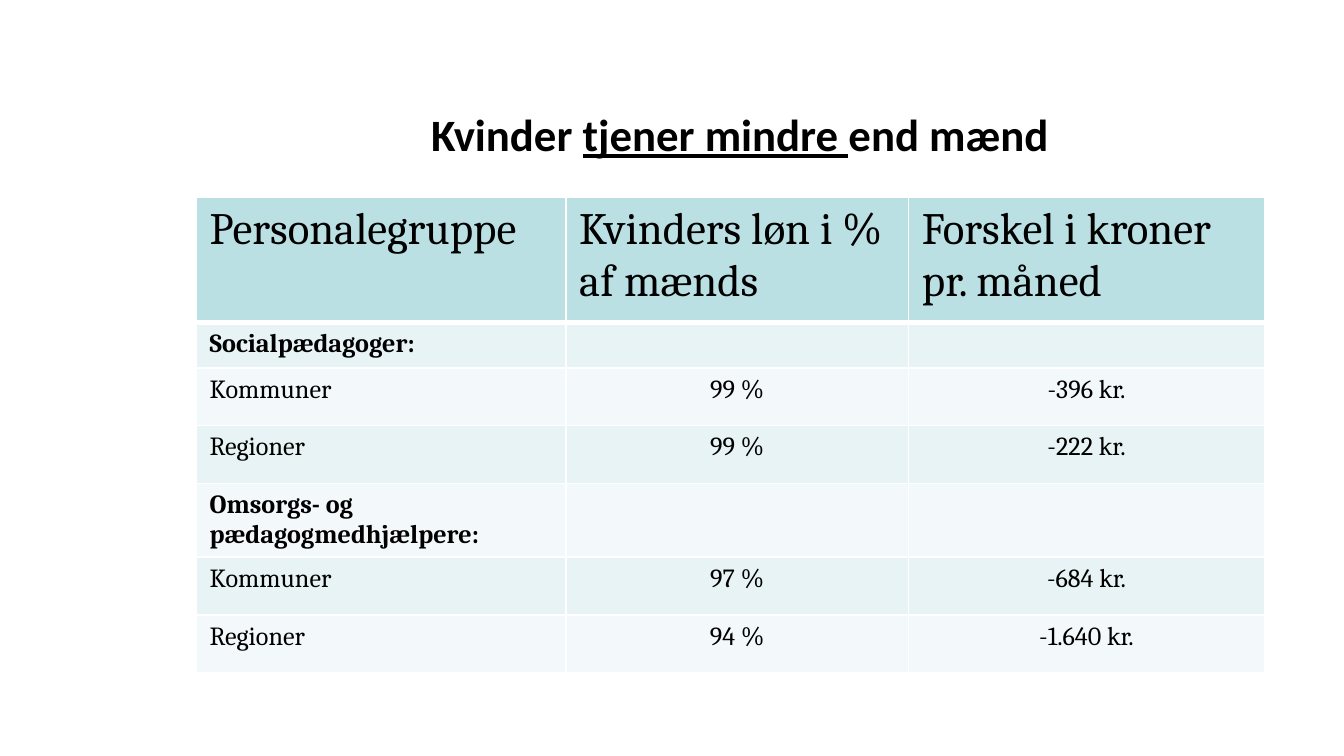
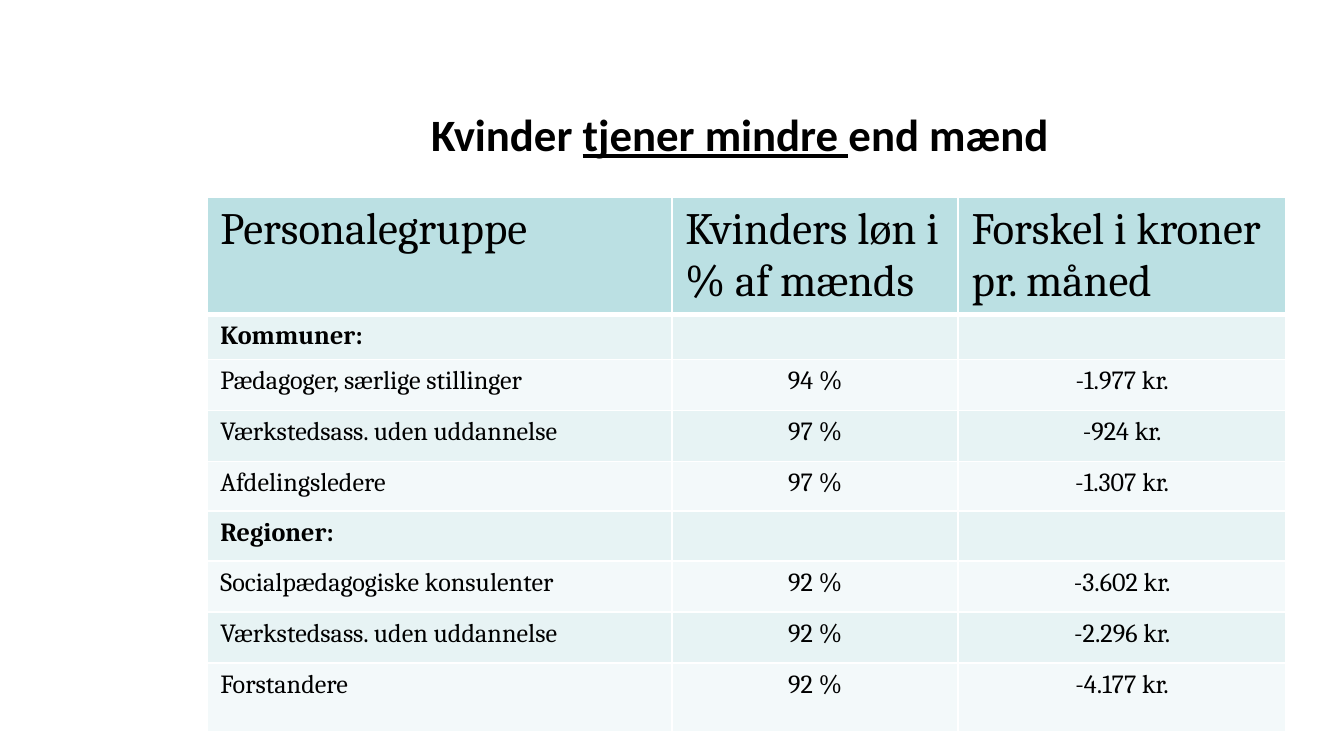
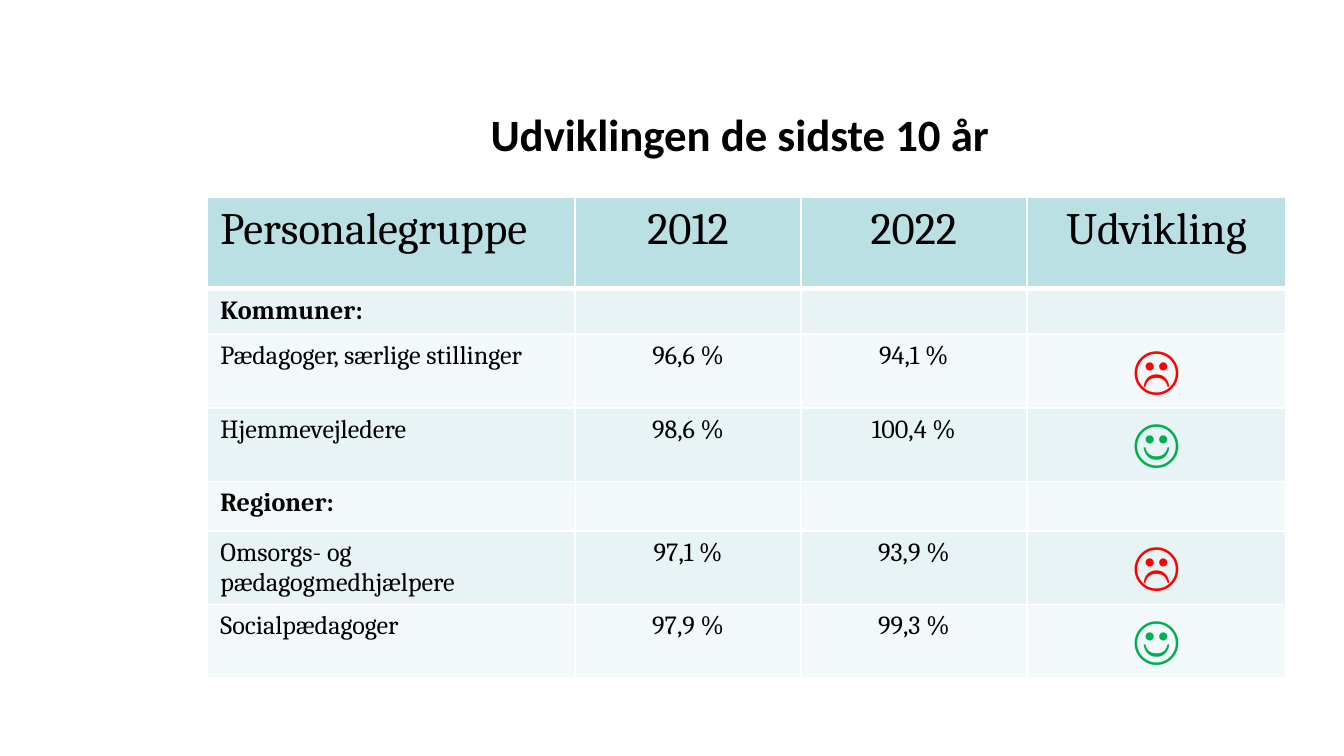
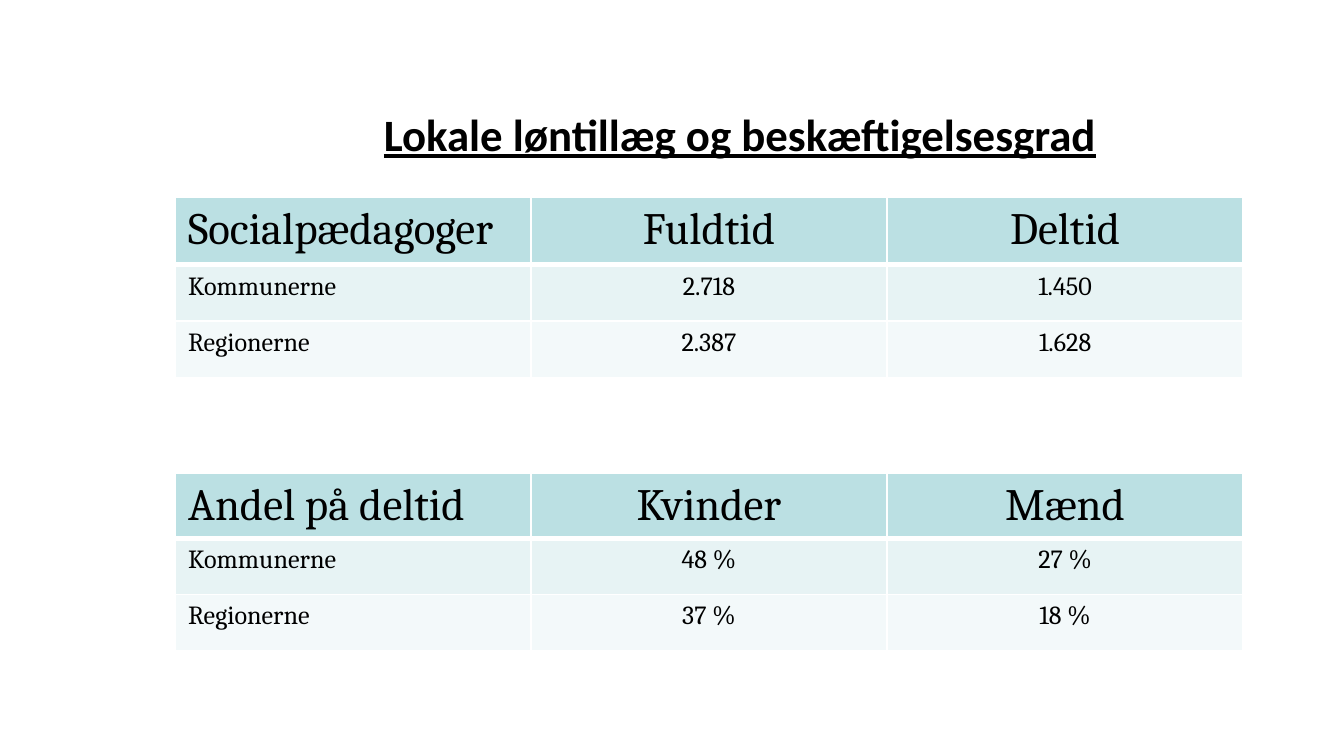
from dataclasses import dataclass

from pptx import Presentation
from pptx.dml.color import RGBColor
from pptx.enum.text import MSO_ANCHOR, MSO_AUTO_SIZE, PP_ALIGN
from pptx.oxml.xmlchemy import OxmlElement
from pptx.util import Inches, Pt

LEFT, CENTER = PP_ALIGN.LEFT, PP_ALIGN.CENTER
TOP = MSO_ANCHOR.TOP
NO_AUTOFIT = MSO_AUTO_SIZE.NONE
TITLE_ONLY = 5


@dataclass(frozen=True)
class Theme:
    text: str = "000000"
    header_fill: str = "BBE0E3"
    band_fills: tuple = ("E7F3F4", "F3F9FA")
    border: str = "FFFFFF"
    worse: str = "FF0000"
    better: str = "00B050"
    title_font: str = "Calibri"
    table_font: str = "Cambria"
    title_size: int = 24
    title_line: int = 42
    header_size: int = 24
    body_size: int = 14
    symbol_size: int = 28
    border_width: int = 1
    header_rule: int = 3


THEME = Theme()
SYMBOL_COLORS = {"☹": THEME.worse, "☺": THEME.better}
TABLE_TOP = 1.47
PAY_HEADER = ["Personalegruppe", "Kvinders løn i % af mænds", "Forskel i kroner pr. måned"]
PAY_TITLE = [("Kvinder ", False), ("tjener mindre ", True), ("end mænd", False)]


def add_run(paragraph, text, font, size, color=THEME.text, bold=False, underline=False):
    run = paragraph.add_run()
    run.text = text
    run.font.name = font
    run.font.size = Pt(size)
    run.font.bold = bold
    run.font.underline = underline
    run.font.color.rgb = RGBColor.from_string(color)


def add_titled_slide(presentation, title_parts):
    """Add a slide whose title is made of (text, underlined) parts."""
    slide = presentation.slides.add_slide(presentation.slide_layouts[TITLE_ONLY])
    title = slide.shapes.title
    title.left, title.top = Inches(1.57), Inches(0.61)
    title.width, title.height = Inches(7.87), Inches(0.87)
    frame = title.text_frame
    frame.margin_left = frame.margin_right = frame.margin_top = frame.margin_bottom = 0
    frame.auto_size = NO_AUTOFIT
    frame.word_wrap = True
    frame.vertical_anchor = TOP
    paragraph = frame.paragraphs[0]
    paragraph.alignment = CENTER
    paragraph.line_spacing = Pt(THEME.title_line)
    for text, underline in title_parts:
        add_run(paragraph, text, THEME.title_font, THEME.title_size,
                bold=True, underline=underline)
    return slide


def set_header_borders(cell):
    """Draw the header's borders; the table style draws those of the body."""
    properties = cell._tc.get_or_add_tcPr()
    for side in "LRTB":
        line = OxmlElement(f"a:ln{side}")
        line.set("w", str(Pt(THEME.header_rule if side == "B" else THEME.border_width)))
        fill = OxmlElement("a:solidFill")
        color = OxmlElement("a:srgbClr")
        color.set("val", THEME.border)
        fill.append(color)
        line.append(fill)
        properties.append(line)


def fill_cell(cell, color):
    cell.fill.solid()
    cell.fill.fore_color.rgb = RGBColor.from_string(color)


def write_cell(cell, text, size=THEME.body_size, alignment=LEFT, **run_format):
    paragraph = cell.text_frame.paragraphs[0]
    paragraph.alignment = alignment
    if text:
        add_run(paragraph, text, THEME.table_font, size, **run_format)
    else:
        end_format = OxmlElement("a:endParaRPr")
        end_format.set("sz", str(size * 100))
        paragraph._p.append(end_format)


def write_body_cell(cell, text, column, is_group):
    if text in SYMBOL_COLORS:
        write_cell(cell, text, THEME.symbol_size, CENTER,
                   color=SYMBOL_COLORS[text], bold=True)
    else:
        write_cell(cell, text, alignment=CENTER if column else LEFT, bold=is_group)


def add_banded_table(slide, left, top, widths, heights, header, rows, header_alignment=CENTER):
    """Add a table; a row with a single entry is a bold group heading."""
    table = slide.shapes.add_table(
        len(heights), len(widths), Inches(left), Inches(top),
        Inches(sum(widths)), Inches(sum(heights))).table
    for column, width in zip(table.columns, widths):
        column.width = Inches(width)
    for row, height in zip(table.rows, heights):
        row.height = Inches(height)

    for column, text in enumerate(header):
        cell = table.cell(0, column)
        set_header_borders(cell)
        fill_cell(cell, THEME.header_fill)
        write_cell(cell, text, THEME.header_size, header_alignment if column else LEFT)

    for index, entries in enumerate(rows):
        is_group = len(entries) == 1
        padded = entries + [""] * (len(widths) - len(entries))
        for column, text in enumerate(padded):
            cell = table.cell(index + 1, column)
            fill_cell(cell, THEME.band_fills[index % 2])
            write_body_cell(cell, text, column, is_group)


def add_care_staff_slide(presentation):
    slide = add_titled_slide(presentation, PAY_TITLE)
    add_banded_table(
        slide, 1.46, TABLE_TOP, [2.75, 2.55, 2.65], [0.93, 0.33] + [0.43] * 5, PAY_HEADER,
        [["Socialpædagoger:"],
         ["Kommuner", "99 %", "-396 kr."],
         ["Regioner", "99 %", "-222 kr."],
         ["Omsorgs- og pædagogmedhjælpere:"],
         ["Kommuner", "97 %", "-684 kr."],
         ["Regioner", "94 %", "-1.640 kr."]],
        header_alignment=LEFT)


def add_other_staff_slide(presentation):
    slide = add_titled_slide(presentation, PAY_TITLE)
    add_banded_table(
        slide, 1.54, TABLE_TOP, [3.46, 2.13, 2.44],
        [0.68, 0.32, 0.38, 0.38, 0.37, 0.37, 0.38, 0.38, 0.51], PAY_HEADER,
        [["Kommuner:"],
         ["Pædagoger, særlige stillinger", "94 %", "-1.977 kr."],
         ["Værkstedsass. uden uddannelse", "97 %", "-924 kr."],
         ["Afdelingsledere", "97 %", "-1.307 kr."],
         ["Regioner:"],
         ["Socialpædagogiske konsulenter", "92 %", "-3.602 kr."],
         ["Værkstedsass. uden uddannelse", "92 %", "-2.296 kr."],
         ["Forstandere", "92 %", "-4.177 kr."]],
        header_alignment=LEFT)


def add_development_slide(presentation):
    slide = add_titled_slide(presentation, [("Udviklingen de sidste 10 år", False)])
    add_banded_table(
        slide, 1.54, TABLE_TOP, [2.74, 1.68, 1.68, 1.93],
        [0.68, 0.32, 0.38, 0.38, 0.37, 0.38, 0.38],
        ["Personalegruppe", "2012", "2022", "Udvikling"],
        [["Kommuner:"],
         ["Pædagoger, særlige stillinger", "96,6 %", "94,1 %", "☹"],
         ["Hjemmevejledere", "98,6 %", "100,4 %", "☺"],
         ["Regioner:"],
         ["Omsorgs- og pædagogmedhjælpere", "97,1 %", "93,9 %", "☹"],
         ["Socialpædagoger", "97,9 %", "99,3 %", "☺"]])


def add_local_pay_slide(presentation):
    slide = add_titled_slide(presentation, [("Lokale løntillæg og beskæftigelsesgrad", True)])
    widths = [2.65] * 3
    add_banded_table(
        slide, 1.3, TABLE_TOP, widths, [0.5, 0.42, 0.42],
        ["Socialpædagoger", "Fuldtid", "Deltid"],
        [["Kommunerne", "2.718", "1.450"],
         ["Regionerne", "2.387", "1.628"]])
    add_banded_table(
        slide, 1.3, 3.52, widths, [0.42] * 3,
        ["Andel på deltid", "Kvinder", "Mænd"],
        [["Kommunerne", "48 %", "27 %"],
         ["Regionerne", "37 %", "18 %"]])


def main():
    presentation = Presentation()
    presentation.slide_width = Inches(10)
    presentation.slide_height = presentation.slide_width * 9 // 16
    add_care_staff_slide(presentation)
    add_other_staff_slide(presentation)
    add_development_slide(presentation)
    add_local_pay_slide(presentation)
    presentation.save("out.pptx")


if __name__ == "__main__":
    main()
